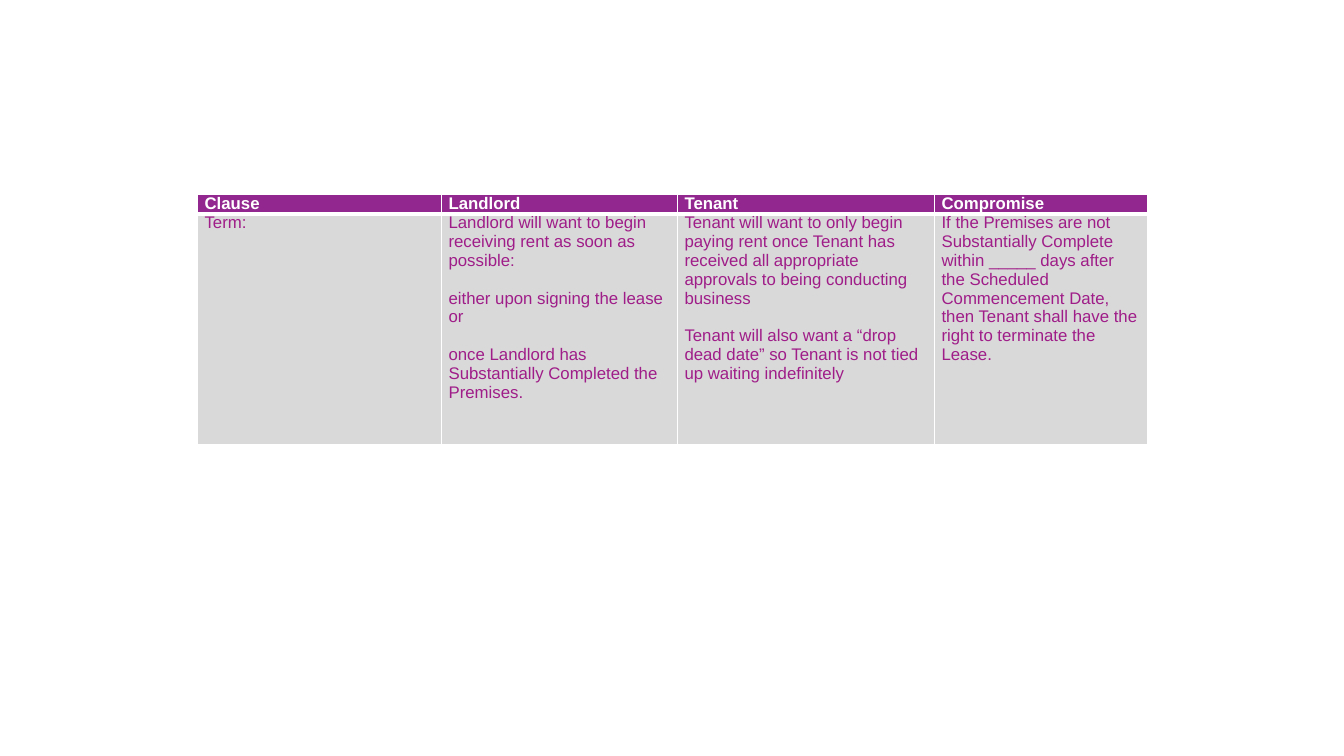
from lxml.etree import SubElement
from pptx import Presentation
from pptx.dml.color import RGBColor
from pptx.oxml.ns import qn
from pptx.util import Inches, Pt


def rgb(color):
    return RGBColor.from_string(color)


class LeaseSlide:
    font = "Arial"
    size = 12
    white = "FFFFFF"
    header_fill = "92278F"
    body_fill = "D9D9D9"
    body_text = "9F1D88"
    paragraph_gap = 13.4

    def __init__(self, prs):
        self.slide = prs.slides.add_slide(prs.slide_layouts[6])

    def table(self, left, top, widths, heights, rows):
        frame = self.slide.shapes.add_table(
            len(rows), len(widths), Inches(left), Inches(top),
            Inches(sum(widths)), Inches(sum(heights)))
        table = frame.table
        table.horz_banding = False
        for column, width in zip(table.columns, widths):
            column.width = Inches(width)
        for i, (row, height, texts) in enumerate(zip(table.rows, heights, rows)):
            row.height = Inches(height)
            for cell, paragraphs in zip(row.cells, texts):
                self.cell(cell, paragraphs, header=i == 0)

    def cell(self, cell, paragraphs, header):
        self.borders(cell, top=1 if header else 3, bottom=3 if header else 1)
        cell.fill.solid()
        cell.fill.fore_color.rgb = rgb(self.header_fill if header else self.body_fill)
        cell.margin_left = cell.margin_right = Inches(0.07)
        cell.margin_top = cell.margin_bottom = 0
        tf = cell.text_frame
        for i, text in enumerate(paragraphs):
            p = tf.add_paragraph() if i else tf.paragraphs[0]
            p.text = text
            if i:
                p.space_before = Pt(self.paragraph_gap)
            p.font.name = self.font
            p.font.size = Pt(self.size)
            p.font.bold = header
            p.font.color.rgb = rgb(self.white if header else self.body_text)

    def borders(self, cell, top, bottom):
        tc_pr = cell._tc.get_or_add_tcPr()
        for side, width in (("L", 1), ("R", 1), ("T", top), ("B", bottom)):
            ln = SubElement(tc_pr, qn(f"a:ln{side}"), w=str(Pt(width)))
            fill = SubElement(ln, qn("a:solidFill"))
            SubElement(fill, qn("a:srgbClr"), val=self.white)


def main():
    prs = Presentation()
    prs.slide_width, prs.slide_height = Inches(13.33), Inches(7.5)
    s = LeaseSlide(prs)
    s.table(1.96, 1.93, [2.42, 2.34, 2.55, 2.11], [0.19, 2.29], [
        [["Clause"], ["Landlord"], ["Tenant"], ["Compromise"]],
        [
            ["Term:"],
            ["Landlord will want to begin receiving rent as soon as possible:",
             "either upon signing the lease or",
             "once Landlord has Substantially Completed the Premises."],
            ["Tenant will want to only begin paying rent once Tenant has received "
             "all appropriate approvals to being conducting business",
             "Tenant will also want a “drop dead date” so Tenant is not tied up "
             "waiting indefinitely"],
            ["If the Premises are not Substantially Complete within _____ days after "
             "the Scheduled Commencement Date, then Tenant shall have the right to "
             "terminate the Lease."],
        ],
    ])
    prs.save("out.pptx")


if __name__ == "__main__":
    main()
